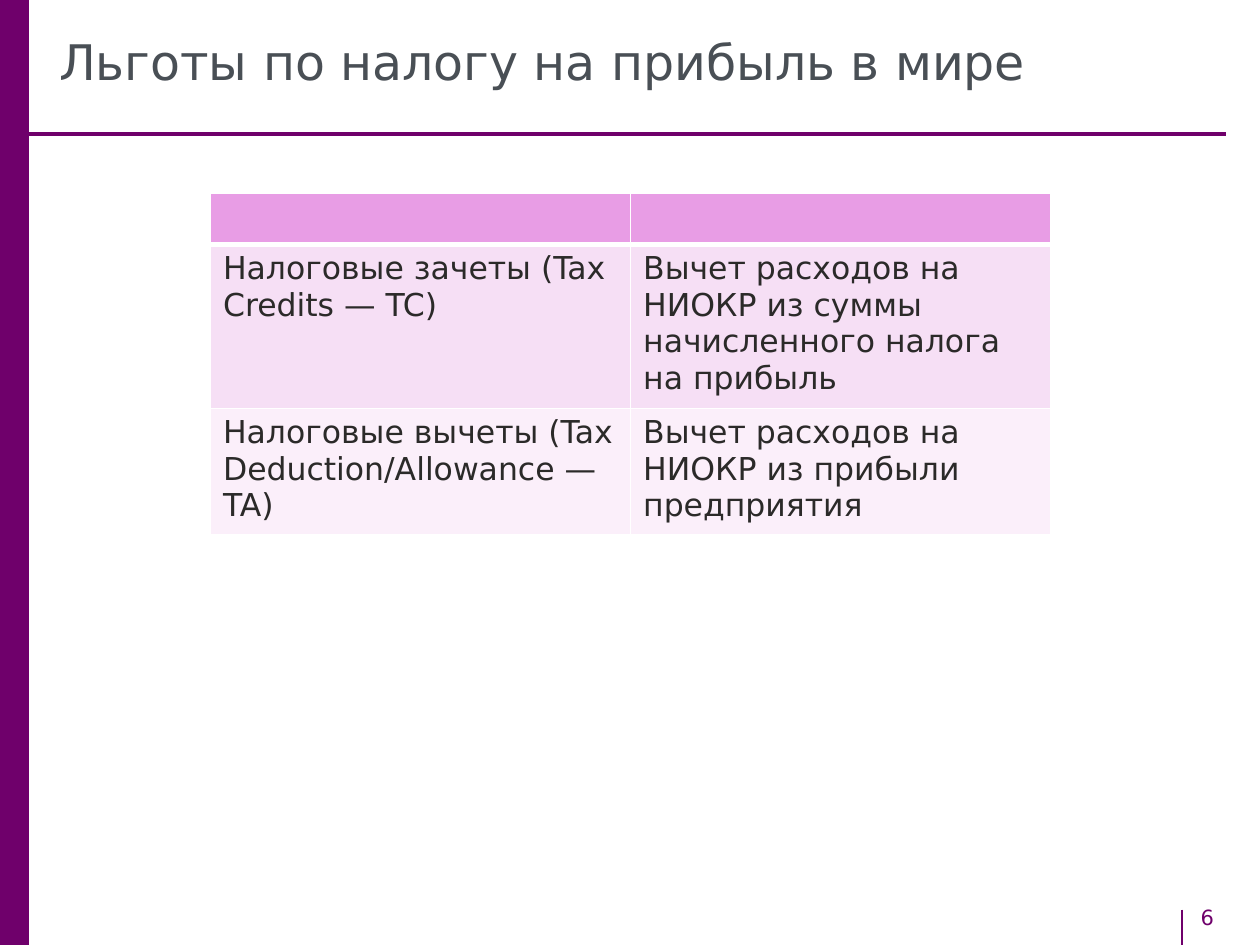
from lxml.etree import SubElement
from pptx import Presentation
from pptx.dml.color import RGBColor
from pptx.enum.shapes import MSO_CONNECTOR, MSO_SHAPE
from pptx.enum.text import MSO_ANCHOR
from pptx.oxml import parse_xml
from pptx.oxml.ns import nsdecls, qn
from pptx.util import Inches, Pt

PLUM = RGBColor(0x6F, 0x00, 0x6B)
SLATE = RGBColor(0x49, 0x4F, 0x55)
INK = RGBColor(0x2B, 0x2A, 0x29)
WHITE = RGBColor(0xFF, 0xFF, 0xFF)
PINK = RGBColor(0xE8, 0x9D, 0xE5)
ROSE = RGBColor(0xF6, 0xDF, 0xF5)
BLUSH = RGBColor(0xFB, 0xEF, 0xFA)

FILLS = [PINK, ROSE, BLUSH]
ROWS = [
    ["", ""],
    ["Налоговые зачеты (Tax Credits — TC)",
     "Вычет расходов на НИОКР из суммы начисленного налога на прибыль"],
    ["Налоговые вычеты (Tax Deduction/Allowance — TA)",
     "Вычет расходов на НИОКР из прибыли предприятия"],
]
THICK = {(0, "B"), (1, "T")}


class Deck:
    """Draw styled elements on the current slide."""

    def __init__(self, slide, face="DejaVu Sans"):
        self.slide = slide
        self.face = face

    def style(self, para, size, color):
        for name, value in {"name": self.face, "size": Pt(size)}.items():
            setattr(para.font, name, value)
        para.font.color.rgb = color

    def text(self, words, box, size, color, frame=None, space=None):
        shape = self.slide.shapes.add_textbox(*map(Inches, box))
        body = shape.text_frame
        for name, value in {"word_wrap": True, **(frame or {})}.items():
            setattr(body, name, value)
        para = body.paragraphs[0]
        para.text = words
        para.line_spacing = space
        self.style(para.runs[0], size, color)

    def bar(self, box, color):
        shape = self.slide.shapes.add_shape(MSO_SHAPE.RECTANGLE, *map(Inches, box))
        shape.shadow.inherit = False
        shape.fill.solid()
        shape.fill.fore_color.rgb = color
        shape.line.fill.background()

    def line(self, ends, color, width):
        rule = self.slide.shapes.add_connector(MSO_CONNECTOR.STRAIGHT, *map(Inches, ends))
        rule.line.color.rgb = color
        rule.line.width = Pt(width)
        SubElement(rule.element.spPr, qn("a:effectLst"))

    def edge(self, cell, side, color, width):
        props = cell._tc.get_or_add_tcPr()
        props.append(parse_xml(
            f'<a:ln{side} {nsdecls("a")} w="{Pt(width)}"><a:solidFill>'
            f'<a:srgbClr val="{color}"/></a:solidFill></a:ln{side}>'))

    def table(self, rows, box, high, fills):
        grid = self.slide.shapes.add_table(
            len(rows), len(rows[0]), *map(Inches, box)).table
        for row, line in enumerate(rows):
            grid.rows[row].height = Inches(high)
            for col, words in enumerate(line):
                cell = grid.cell(row, col)
                for side in "LRTB":
                    self.edge(cell, side, WHITE, 3 if (row, side) in THICK else 1)
                cell.fill.solid()
                cell.fill.fore_color.rgb = fills[row]
                cell.text = words
                for run in cell.text_frame.paragraphs[0].runs:
                    self.style(run, 18, INK)


def main():
    show = Presentation()
    show.slide_width, show.slide_height = Inches(10), Inches(7.5)
    deck = Deck(show.slides.add_slide(show.slide_layouts[6]))
    deck.text("6", (9.43, 7.13, 0.49, 0.3), 12, PLUM)
    deck.line((9.38, 7.22, 9.38, 7.5), PLUM, 1)
    deck.bar((-0.02, 0, 0.25, 7.5), PLUM)
    deck.line((0.21, 1.06, 9.73, 1.06), PLUM, 2.25)
    flush = dict.fromkeys(
        ["margin_left", "margin_top", "margin_right", "margin_bottom"], 0)
    deck.text("Льготы по налогу на прибыль в мире", (0.47, 0.19, 7.76, 0.65), 28, SLATE,
              {**flush, "vertical_anchor": MSO_ANCHOR.MIDDLE}, 0.9)
    deck.table(ROWS, (1.67, 1.53, 6.67, 1.23), 0.41, FILLS)
    show.save("out.pptx")


if __name__ == "__main__":
    main()
